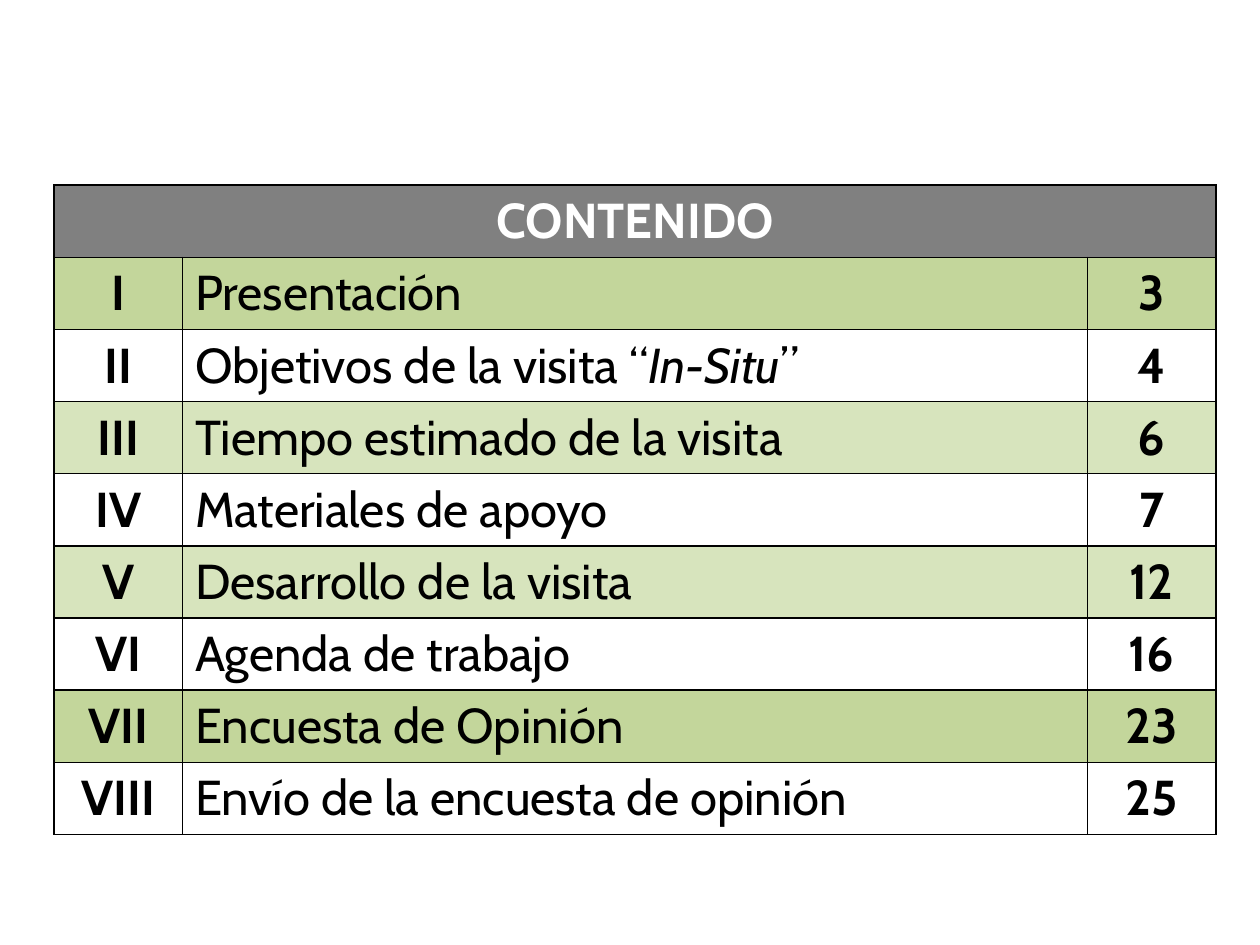
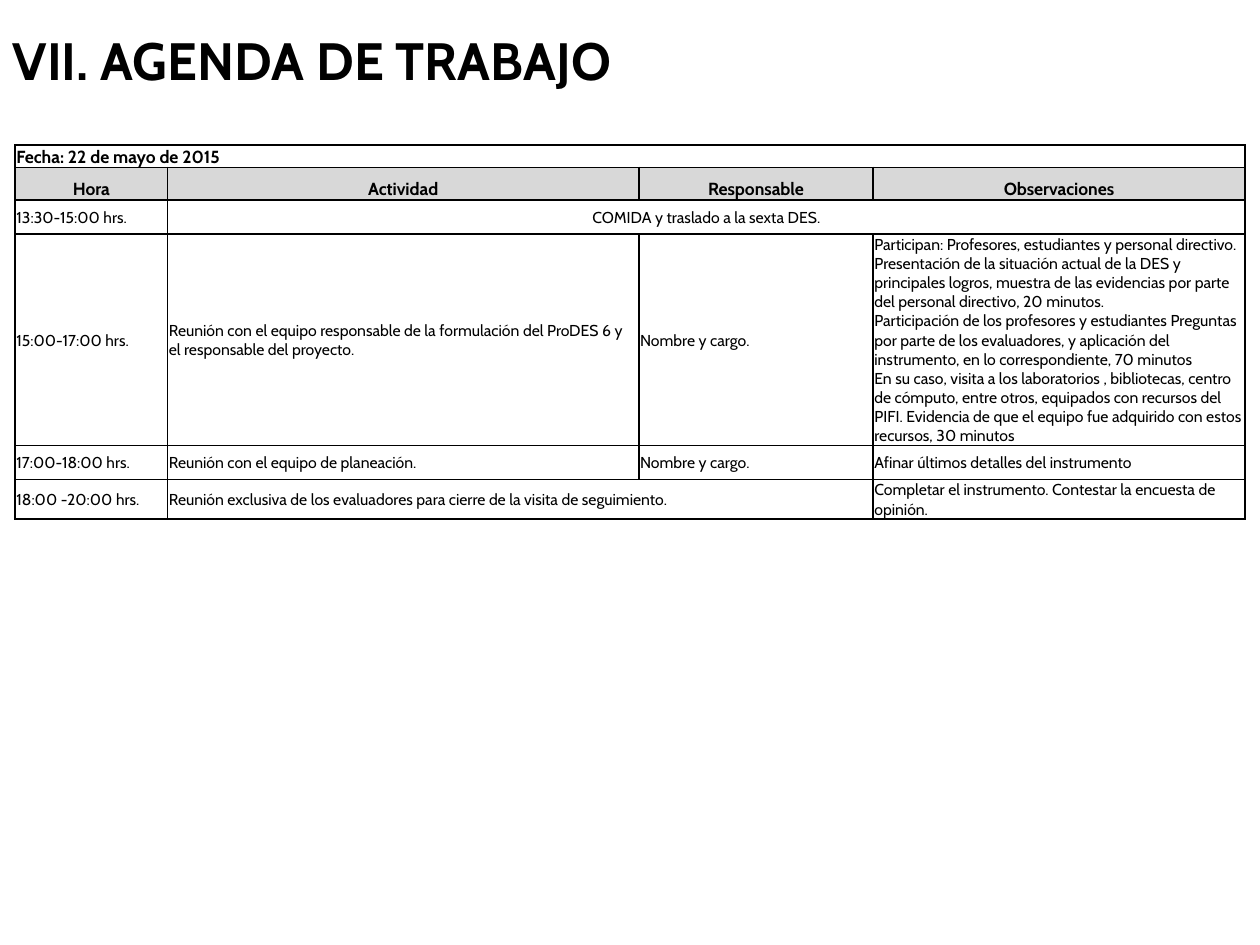
from lxml import etree
from pptx import Presentation
from pptx.dml.color import RGBColor
from pptx.enum.text import MSO_ANCHOR, MSO_AUTO_SIZE, PP_ALIGN
from pptx.oxml.ns import qn
from pptx.util import Inches, Pt

BLACK = RGBColor(0x00, 0x00, 0x00)
WHITE = RGBColor(0xFF, 0xFF, 0xFF)
GRAY = RGBColor(0x80, 0x80, 0x80)
LIGHT_GRAY = RGBColor(0xD8, 0xD8, 0xD8)
GREEN = RGBColor(0xC3, 0xD6, 0x9B)
LIGHT_GREEN = RGBColor(0xD7, 0xE4, 0xBD)

LEFT, CENTER = PP_ALIGN.LEFT, PP_ALIGN.CENTER
TOP, MIDDLE, BOTTOM = MSO_ANCHOR.TOP, MSO_ANCHOR.MIDDLE, MSO_ANCHOR.BOTTOM
NO_AUTOFIT = MSO_AUTO_SIZE.NONE
TITLE_ONLY, BLANK = 5, 6

CONTENTS = [
    ("I", "Presentación", "3", GREEN),
    ("II", "Objetivos de la visita “*In-Situ*”", "4", None),
    ("III", "Tiempo estimado de la visita", "6", LIGHT_GREEN),
    ("IV", "Materiales de apoyo", "7", None),
    ("V", "Desarrollo de la visita", "12", LIGHT_GREEN),
    ("VI", "Agenda de trabajo", "16", None),
    ("VII", "Encuesta de Opinión", "23", GREEN),
    ("VIII", "Envío de la encuesta de opinión", "25", None),
]

DATE = "Fecha: 22 de mayo de 2015"
HEADINGS = ("Hora", "Actividad", "Responsable", "Observaciones")
MEETING_NOTES = (
    "Participan: Profesores, estudiantes y personal directivo.\v"
    "Presentación de la situación actual de la DES y principales logros, muestra de las "
    "evidencias por parte del personal directivo, 20 minutos.\n"
    "Participación de los profesores y estudiantes Preguntas por parte de los evaluadores, "
    "y aplicación del instrumento, en lo correspondiente, 70 minutos\n"
    "En su caso, visita a los laboratorios , bibliotecas, centro de cómputo, entre otros, "
    "equipados con recursos del PIFI. Evidencia de que el equipo fue adquirido con estos "
    "recursos, 30 minutos"
)
AGENDA = [
    ("13:30-15:00 hrs.", "COMIDA y traslado a la sexta DES.", None, None),
    ("15:00-17:00 hrs.",
     "Reunión con el equipo responsable de la formulación del ProDES 6 y el responsable "
     "del proyecto.", "Nombre y cargo.", MEETING_NOTES),
    ("17:00-18:00 hrs.", "Reunión con el equipo de planeación.", "Nombre y cargo.",
     "Afinar últimos detalles del instrumento"),
    ("18:00 -20:00 hrs.",
     "Reunión exclusiva de los evaluadores para cierre de la visita de seguimiento.", None,
     "Completar el instrumento. Contestar la encuesta de opinión."),
]


class Deck:
    """Holds the shared style and the current slide."""

    font = "Cabin"
    border = Pt(1)

    def __init__(self):
        self.prs = Presentation()
        self.prs.slide_width, self.prs.slide_height = Inches(10), Inches(7.5)
        self.s = None

    def slide(self, layout):
        self.s = self.prs.slides.add_slide(self.prs.slide_layouts[layout])

    def style(self, r, size, bold=False, color=BLACK):
        r.font.name, r.font.size = self.font, Pt(size)
        r.font.bold, r.font.color.rgb = bold, color

    def title(self, text):
        sp = self.s.shapes.title
        sp.left, sp.top, sp.width, sp.height = Inches(0), Inches(0.09), Inches(10), Inches(0.77)
        tf = sp.text_frame
        tf.text = text
        tf.auto_size, tf.vertical_anchor = NO_AUTOFIT, MIDDLE
        p = tf.paragraphs[0]
        p.alignment = LEFT
        self.style(p.runs[0], 30, bold=True)

    def table(self, left, top, widths, heights):
        frame = self.s.shapes.add_table(
            len(heights), len(widths), Inches(left), Inches(top),
            Inches(sum(widths)), Inches(sum(heights)))
        table = frame.table
        table.horz_banding = table.first_row = False
        for column, width in zip(table.columns, widths):
            column.width = Inches(width)
        for row, height in zip(table.rows, heights):
            row.height = Inches(height)
        for cell in table.iter_cells():
            cell.fill.background()
            self.borders(cell)
        return table

    def borders(self, cell):
        properties = cell._tc.get_or_add_tcPr()
        for i, side in enumerate(("a:lnL", "a:lnR", "a:lnT", "a:lnB")):
            line = etree.Element(qn(side), w=str(self.border))
            fill = etree.SubElement(line, qn("a:solidFill"))
            etree.SubElement(fill, qn("a:srgbClr"), val=str(BLACK))
            properties.insert(i, line)

    def row(self, table, index, texts, size, centered=(), bold=(), color=BLACK,
            fill=None, anchor=TOP, tight=False):
        for col, text in enumerate(texts):
            if text is None:
                continue
            end = col
            while end + 1 < len(texts) and texts[end + 1] is None:
                end += 1
            cell = table.cell(index, col)
            if end > col:
                cell.merge(table.cell(index, end))
            if fill is not None:
                cell.fill.solid()
                cell.fill.fore_color.rgb = fill
            cell.vertical_anchor = anchor
            if tight:
                cell.margin_left = cell.margin_right = cell.margin_top = Inches(0.01)
                cell.margin_bottom = 0
            tf = cell.text_frame
            tf.text = text
            for p in tf.paragraphs:
                p.alignment = CENTER if col in centered else LEFT
                if "*" in p.text:
                    parts = p.text.split("*")
                    p.clear()
                    for i, part in enumerate(parts):
                        r = p.add_run()
                        r.text, r.font.italic = part, i % 2 == 1
                for r in p.runs:
                    self.style(r, size, col in bold, color)


def main():
    deck = Deck()

    deck.slide(BLANK)
    contents = deck.table(0.43, 1.47, (1.02, 7.18, 1.02), [0.57] * (len(CONTENTS) + 1))
    deck.row(contents, 0, ("CONTENIDO", None, None), 28, (0,), (0,), WHITE, GRAY)
    for i, (*texts, fill) in enumerate(CONTENTS, 1):
        deck.row(contents, i, texts, 28, (0, 2), (0, 2), fill=fill)

    deck.slide(TITLE_ONLY)
    agenda = deck.table(0.12, 1.15, (1.21, 3.74, 1.86, 2.95),
                        (0.17, 0.26, 0.27, 1.67, 0.27, 0.31))
    every = range(len(HEADINGS))
    deck.row(agenda, 0, (DATE, None, None, None), 10, bold=every, anchor=BOTTOM, tight=True)
    deck.row(agenda, 1, HEADINGS, 10, every, every, fill=LIGHT_GRAY, anchor=BOTTOM, tight=True)
    for i, texts in enumerate(AGENDA, 2):
        centered = (1,) if texts[2:] == (None, None) else ()
        deck.row(agenda, i, texts, 9, centered, anchor=MIDDLE, tight=True)
    deck.title("VII. AGENDA DE TRABAJO")

    deck.prs.save("out.pptx")


if __name__ == "__main__":
    main()
